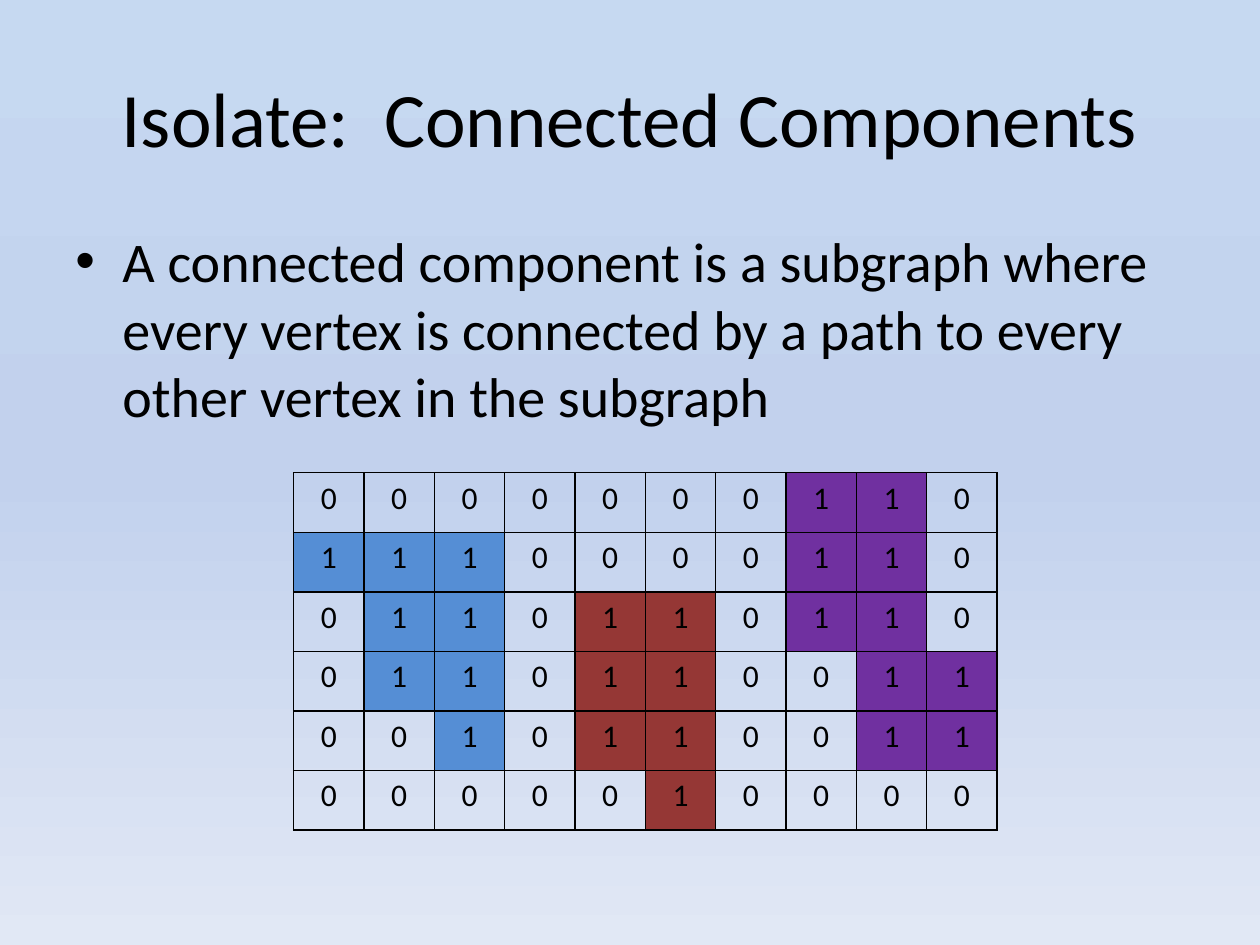
"""Build a slide that marks the connected components of a binary grid."""
import copy

import pptx
import pptx.dml.color
import pptx.enum.text
import pptx.oxml
import pptx.oxml.ns
import pptx.util
from pptx.util import Cm

GRID = [
    "0000000PP0",
    "BBB0000PP0",
    "0BB0RR0PP0",
    "0BB0RR00PP",
    "00B0RR00PP",
    "00000R0000",
]
COMPONENT_COLORS = {"B": "558ED5", "R": "953735", "P": "7030A0"}


def color(value):
    return pptx.dml.color.RGBColor.from_string(value)


def add_element(parent, markup):
    namespace = pptx.oxml.ns.nsdecls("a")
    tag, rest = markup.split(" ", 1)
    parent.append(pptx.oxml.parse_xml(f"{tag} {namespace} {rest}"))


class SlideBuilder:
    font = "Calibri"
    ink = "000000"
    center = pptx.enum.text.PP_ALIGN.CENTER

    def __init__(self, presentation):
        self.slide = presentation.slides.add_slide(presentation.slide_layouts[5])

    def background(self, stops):
        fill = self.slide.background.fill
        fill.gradient()
        fill.gradient_angle = 270
        stop_list = self.slide.element.find(".//" + pptx.oxml.ns.qn("a:gsLst"))
        while len(stop_list) < len(stops):
            stop_list.append(copy.deepcopy(stop_list[-1]))
        for stop, (position, value) in zip(fill.gradient_stops, stops):
            stop.position = position
            stop.color.rgb = color(value)

    def add_run(self, paragraph, text, size):
        run = paragraph.add_run()
        run.text = text
        run.font.name = self.font
        run.font.size = pptx.util.Pt(size)
        run.font.color.rgb = color(self.ink)

    def title(self, text, left, top, width, height):
        shape = self.slide.shapes.title
        shape.left, shape.top, shape.width, shape.height = left, top, width, height
        shape.text_frame.vertical_anchor = pptx.enum.text.MSO_ANCHOR.MIDDLE
        paragraph = shape.text_frame.paragraphs[0]
        paragraph.alignment = self.center
        self.add_run(paragraph, text, 44)

    def bullet(self, text, left, top, width, height):
        shape = self.slide.shapes.add_textbox(left, top, width, height)
        shape.text_frame.word_wrap = True
        paragraph = shape.text_frame.paragraphs[0]
        paragraph.space_before = pptx.util.Pt(6.4)
        self.add_run(paragraph, text, 32)
        properties = paragraph._p.get_or_add_pPr()
        indent = Cm(0.95)
        properties.set("marL", str(indent))
        properties.set("indent", str(-indent))
        add_element(properties, '<a:buFont typeface="Arial"/>')
        add_element(properties, '<a:buChar char="•"/>')

    def cell(self, cell, mark):
        properties = cell._tc.get_or_add_tcPr()
        for side in "LRTB":
            add_element(
                properties,
                f'<a:ln{side} w="{pptx.util.Pt(1)}"><a:solidFill>'
                f'<a:srgbClr val="{self.ink}"/></a:solidFill></a:ln{side}>',
            )
        if mark in COMPONENT_COLORS:
            cell.fill.solid()
            cell.fill.fore_color.rgb = color(COMPONENT_COLORS[mark])
        else:
            cell.fill.background()
        paragraph = cell.text_frame.paragraphs[0]
        paragraph.alignment = self.center
        self.add_run(paragraph, "1" if mark in COMPONENT_COLORS else "0", 18)

    def grid(self, rows, left, top, width, height):
        frame = self.slide.shapes.add_table(
            len(rows), len(rows[0]), left, top, width, height
        )
        table = frame.table
        table.first_row = False
        table.horz_banding = False
        for row_index, row in enumerate(rows):
            for column_index, mark in enumerate(row):
                self.cell(table.cell(row_index, column_index), mark)


def main():
    presentation = pptx.Presentation()
    presentation.slide_width = Cm(25.4)
    presentation.slide_height = Cm(19.05)
    builder = SlideBuilder(presentation)
    builder.background([(0, "C6D9F1"), (0.5, "C2D1ED"), (1, "E1E8F5")])
    builder.title(
        "Isolate:  Connected Components", Cm(1.27), Cm(0.76), Cm(22.86), Cm(3.18)
    )
    builder.bullet(
        "A connected component is a subgraph where every vertex is connected "
        "by a path to every other vertex in the subgraph",
        Cm(1.27), Cm(4.45), Cm(22.86), Cm(12.57),
    )
    builder.grid(GRID, Cm(5.92), Cm(9.53), Cm(14.18), Cm(7.2))
    presentation.save("out.pptx")


if __name__ == "__main__":
    main()
